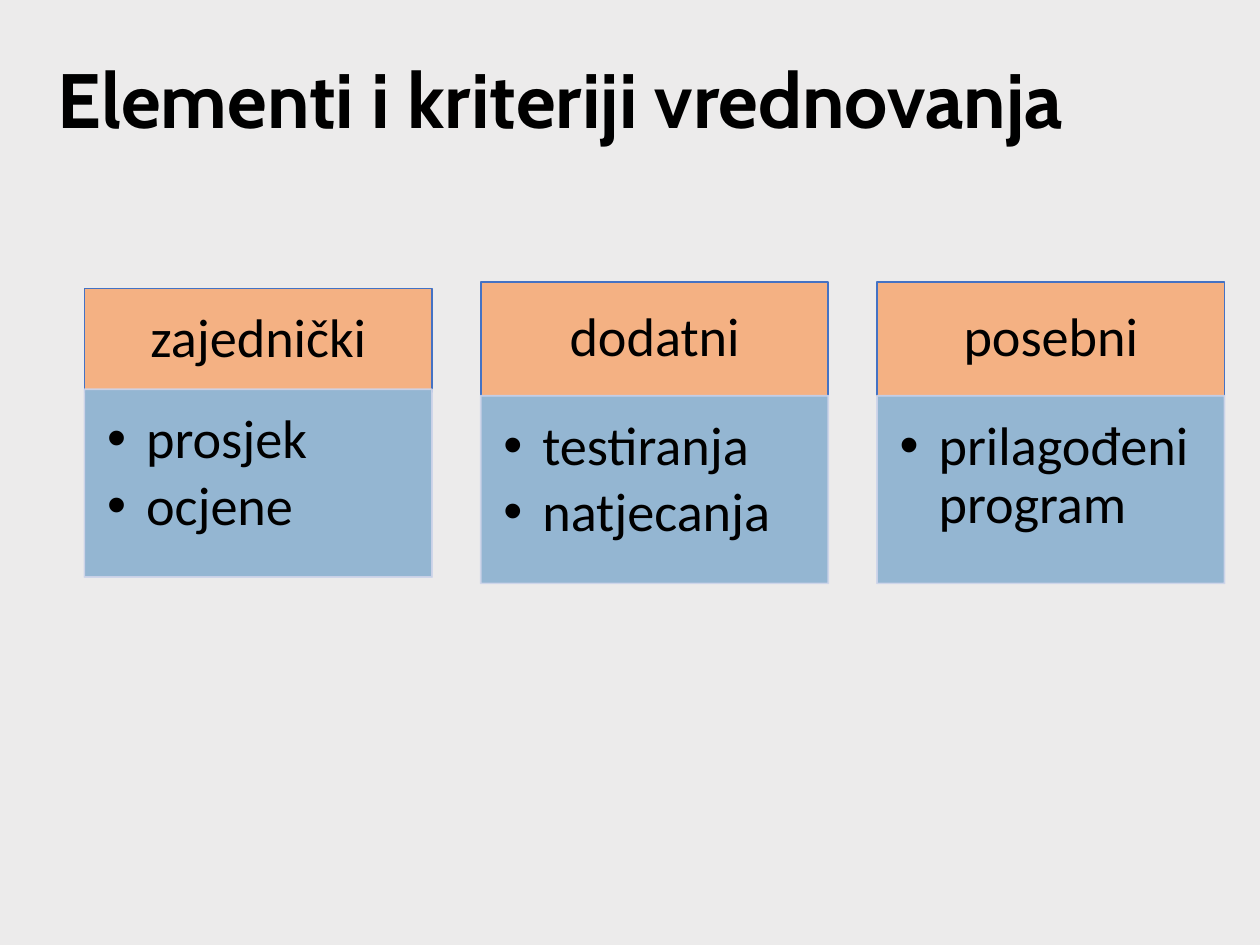
from lxml.etree import SubElement
from pptx import Presentation
from pptx.dml.color import RGBColor
from pptx.enum.shapes import MSO_SHAPE
from pptx.enum.text import MSO_ANCHOR, PP_ALIGN
from pptx.oxml.ns import qn
from pptx.util import Inches, Pt

BACKGROUND = RGBColor(0xEC, 0xEB, 0xEB)
BLACK = RGBColor(0x00, 0x00, 0x00)
ORANGE = RGBColor(0xF4, 0xB1, 0x83)
HEADER_LINE = RGBColor(0x44, 0x72, 0xC4)
BLUE = RGBColor(0x94, 0xB6, 0xD2)
LIST_LINE = RGBColor(0xCF, 0xD5, 0xEA)

CARD_LEFT, CARD_WIDTH, CARD_PITCH = 0.67, 2.76, 3.145
LIST_HEIGHT = 1.49

# heading, items, top, header height, top of the list
CARDS = [
    ("zajednički", ["prosjek", "ocjene"], 2.29, 0.82, 3.09),
    ("dodatni", ["testiranja", "natjecanja"], 2.24, 0.9, 3.14),
    ("posebni", ["prilagođeni program"], 2.24, 0.9, 3.14),
]


def set_frame(text_frame, anchor, insets):
    text_frame.word_wrap = True
    text_frame.vertical_anchor = anchor
    for side, inset in zip(("left", "top", "right", "bottom"), insets):
        setattr(text_frame, f"margin_{side}", Inches(inset))


def write_paragraphs(text_frame, texts, font, paragraph_format):
    """Write one paragraph per text, with the given font and paragraph values."""
    text_frame.text = "\n".join(texts)
    for paragraph in text_frame.paragraphs:
        for name, value in paragraph_format.items():
            setattr(paragraph, name, value)
        for name, value in font.items():
            setattr(paragraph.font, name, value)
            setattr(paragraph.runs[0].font, name, value)
        paragraph.runs[0].font.color.rgb = BLACK


def set_indent(paragraph, left, first_line=0):
    properties = paragraph._p.get_or_add_pPr()
    properties.set("marL", str(Inches(left)))
    properties.set("indent", str(Inches(first_line)))
    return properties


def add_bullet(paragraph):
    properties = set_indent(paragraph, 0.31, -0.31)
    SubElement(properties, qn("a:buFont"), typeface="Arial")
    SubElement(properties, qn("a:buChar"), char="•")


def add_title(slide, text, box):
    shape = slide.shapes.add_textbox(*map(Inches, box))
    set_frame(shape.text_frame, MSO_ANCHOR.TOP, (0.1, 0.05, 0.1, 0.05))
    write_paragraphs(
        shape.text_frame, [text],
        {"name": "Cabin", "size": Pt(44), "bold": True},
        {"line_spacing": 0.9, "space_before": Pt(10)},
    )
    set_indent(shape.text_frame.paragraphs[0], 0.12)


def add_panel(slide, box, fill, line):
    shape = slide.shapes.add_shape(MSO_SHAPE.RECTANGLE, *map(Inches, box))
    shape.shadow.inherit = False
    shape.fill.solid()
    shape.fill.fore_color.rgb = fill
    shape.line.color.rgb = line
    shape.line.width = Pt(1)
    return shape


def add_header(slide, text, box):
    frame = add_panel(slide, box, ORANGE, HEADER_LINE).text_frame
    set_frame(frame, MSO_ANCHOR.MIDDLE, (0.24, 0.14, 0.24, 0.14))
    write_paragraphs(
        frame, [text], {"name": "Calibri", "size": Pt(31)},
        {"alignment": PP_ALIGN.CENTER, "line_spacing": 0.9},
    )


def add_list(slide, items, box):
    shape = add_panel(slide, box, BLUE, LIST_LINE)
    line_color = shape.line._ln.find(".//" + qn("a:srgbClr"))
    SubElement(line_color, qn("a:alpha"), val="90000")
    set_frame(shape.text_frame, MSO_ANCHOR.TOP, (0.18, 0.18, 0.24, 0.27))
    write_paragraphs(
        shape.text_frame, items, {"name": "Calibri", "size": Pt(31)},
        {"alignment": PP_ALIGN.LEFT, "line_spacing": 0.9,
         "space_after": Pt(4.65), "level": 1},
    )
    for paragraph in shape.text_frame.paragraphs:
        add_bullet(paragraph)


def main():
    presentation = Presentation()
    presentation.slide_width = Inches(10)
    presentation.slide_height = Inches(7.5)
    slide = presentation.slides.add_slide(presentation.slide_layouts[6])
    slide.background.fill.solid()
    slide.background.fill.fore_color.rgb = BACKGROUND

    add_title(slide, "Elementi i kriteriji vrednovanja", (0.24, 0.44, 9.53, 0.79))
    for index, (heading, items, top, header_height, list_top) in enumerate(CARDS):
        left = CARD_LEFT + index * CARD_PITCH
        add_header(slide, heading, (left, top, CARD_WIDTH, header_height))
        add_list(slide, items, (left, list_top, CARD_WIDTH, LIST_HEIGHT))

    presentation.save("out.pptx")


if __name__ == "__main__":
    main()
